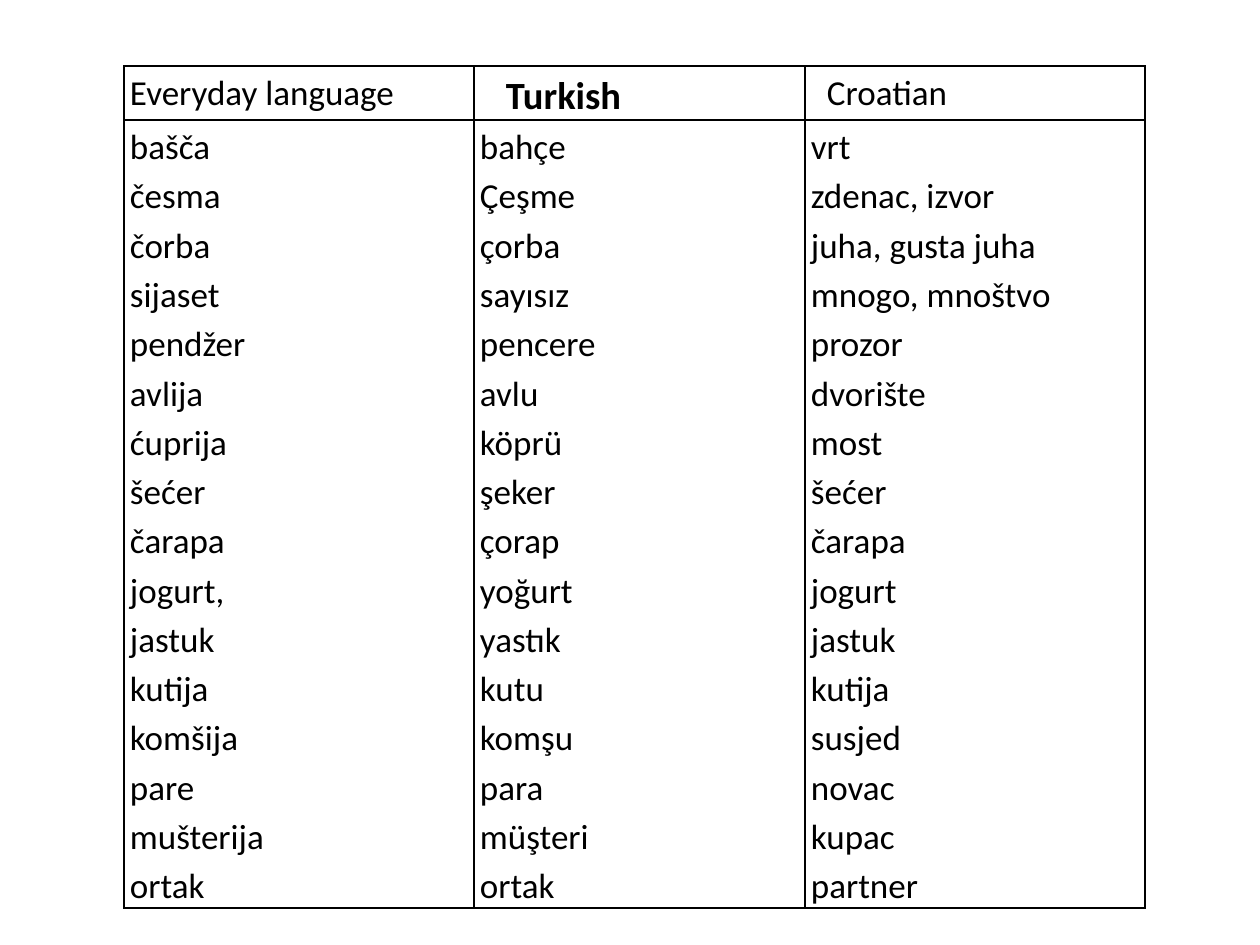
import pptx
import pptx.util
import pptx.dml.color
import pptx.oxml
import pptx.oxml.ns

PX = 914400 // 126
INK = {"text": "000000", "line": "000000"}
FONT = "Calibri"
LEFT, TOP, PAD = 124, 66, 6
COLS = [350, 331, 340]
ROWS = [54, 788]

HEADS = [
    ("Everyday language", {"size": 20}),
    ("Turkish", {"size": 22, "bold": True, "indent": 26}),
    ("Croatian", {"size": 20, "indent": 16}),
]
WORDS = [
    ("bašča", "bahçe", "vrt"),
    ("česma", "Çeşme", "zdenac, izvor"),
    ("čorba", "çorba", "juha, gusta juha"),
    ("sijaset", "sayısız", "mnogo, mnoštvo"),
    ("pendžer", "pencere", "prozor"),
    ("avlija", "avlu", "dvorište"),
    ("ćuprija", "köprü", "most"),
    ("šećer", "şeker", "šećer"),
    ("čarapa", "çorap", "čarapa"),
    ("jogurt,", "yoğurt", "jogurt"),
    ("jastuk", "yastık", "jastuk"),
    ("kutija", "kutu", "kutija"),
    ("komšija", "komşu", "susjed"),
    ("pare", "para", "novac"),
    ("mušterija", "müşteri", "kupac"),
    ("ortak", "ortak", "partner"),
]


def px(n):
    return pptx.util.Emu(n * PX)


def write(cell, text, size=20, bold=False, indent=0):
    cell.margin_left, cell.margin_right = px(PAD + indent), px(PAD)
    cell.margin_top = cell.margin_bottom = 0
    frame = cell.text_frame
    frame.text = text
    for para in frame.paragraphs:
        para.line_spacing = 1.15
        for run in para.runs:
            font = run.font
            font.name, font.size, font.bold = FONT, pptx.util.Pt(size), bold
            font.color.rgb = pptx.dml.color.RGBColor.from_string(INK["text"])


def frame_cell(cell):
    cell.fill.background()
    props = cell._tc.get_or_add_tcPr()
    for i, side in enumerate("LRTB"):
        props.insert(i, pptx.oxml.parse_xml(
            f'<a:ln{side} {pptx.oxml.ns.nsdecls("a")} w="12700"><a:solidFill>'
            f'<a:srgbClr val="{INK["line"]}"/></a:solidFill></a:ln{side}>'))


def main():
    deck = pptx.Presentation()
    deck.slide_width, deck.slide_height = px(1260), px(945)
    slide = deck.slides.add_slide(deck.slide_layouts[6])
    table = slide.shapes.add_table(
        len(ROWS), len(COLS), px(LEFT), px(TOP), px(sum(COLS)), px(sum(ROWS))).table
    table.first_row = table.horz_banding = False
    for row, high in zip(table.rows, ROWS):
        row.height = px(high)
    for i, (wide, (head, style), words) in enumerate(zip(COLS, HEADS, zip(*WORDS))):
        table.columns[i].width = px(wide)
        write(table.cell(0, i), head, **style)
        write(table.cell(1, i), "\n".join(words))
    for cell in table.iter_cells():
        frame_cell(cell)
    deck.save("out.pptx")


if __name__ == "__main__":
    main()
